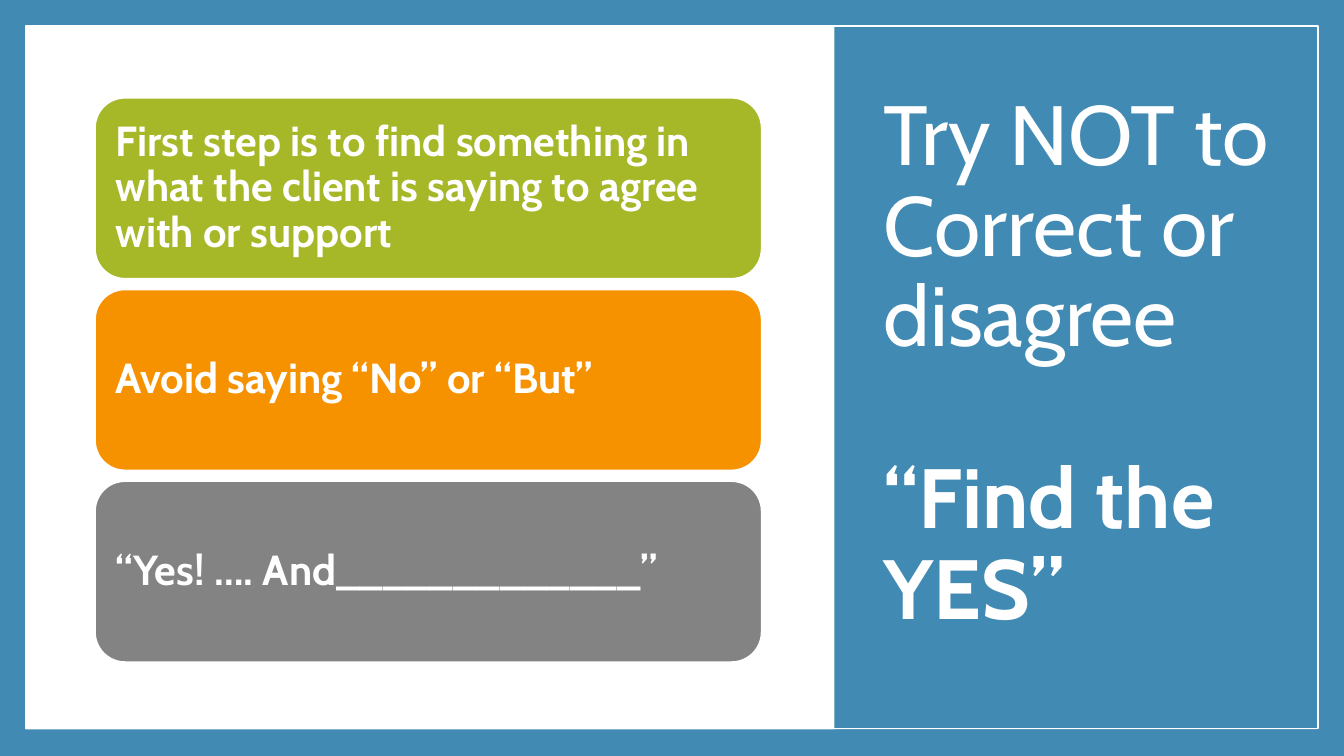
from pptx import Presentation
from pptx.dml.color import RGBColor
from pptx.enum.shapes import MSO_SHAPE
from pptx.enum.text import MSO_ANCHOR, PP_ALIGN
from pptx.util import Cm, Pt

BLUE = RGBColor(0x41, 0x8A, 0xB3)
WHITE = RGBColor(0xFF, 0xFF, 0xFF)
GREEN = RGBColor(0xA6, 0xB7, 0x27)
ORANGE = RGBColor(0xF6, 0x92, 0x00)
GRAY = RGBColor(0x83, 0x83, 0x83)

STEPS = [
    ("First step is to find something in what the client is saying to agree with or support", GREEN),
    ("Avoid saying “No” or “But”", ORANGE),
    ("“Yes! …. And_____________”", GRAY),
]
STEP_TOP, STEP_PITCH = 2.46, 4.83


class SlideBuilder:
    """Holds the text style and the current slide."""

    def __init__(self, slide, font_name="Cabin", text_color=WHITE, line_spacing=0.9):
        self.slide = slide
        self.font_name = font_name
        self.text_color = text_color
        self.line_spacing = line_spacing

    def background(self, color):
        fill = self.slide.background.fill
        fill.solid()
        fill.fore_color.rgb = color

    def panel(self, left, top, width, height, fill=None, outline=None, preset=MSO_SHAPE.RECTANGLE):
        panel = self.slide.shapes.add_shape(preset, Cm(left), Cm(top), Cm(width), Cm(height))
        panel.shadow.inherit = False
        if fill is None:
            panel.fill.background()
        else:
            panel.fill.solid()
            panel.fill.fore_color.rgb = fill
        if outline is None:
            panel.line.fill.background()
        else:
            panel.line.color.rgb = WHITE
            panel.line.width = Pt(outline)
        return panel

    def add_text(self, paragraph, text, size, bold=False):
        paragraph.alignment = PP_ALIGN.LEFT
        paragraph.line_spacing = self.line_spacing
        run = paragraph.add_run()
        run.text = text
        run.font.name = self.font_name
        run.font.size = Pt(size)
        run.font.bold = bold
        run.font.color.rgb = self.text_color

    def step(self, top, text, color):
        bar = self.panel(2.39, top, 16.81, 4.57, color, 1.5, MSO_SHAPE.ROUNDED_RECTANGLE)
        frame = bar.text_frame
        frame.word_wrap = True
        frame.vertical_anchor = MSO_ANCHOR.MIDDLE
        frame.margin_left = frame.margin_right = Cm(0.3)
        frame.margin_top = frame.margin_bottom = Cm(0.3)
        self.add_text(frame.paragraphs[0], text, 30, bold=True)

    def title(self, heading, motto):
        frame = self.slide.shapes.add_textbox(Cm(22.02), Cm(1.7), Cm(11), Cm(15)).text_frame
        frame.word_wrap = True
        frame.vertical_anchor = MSO_ANCHOR.MIDDLE
        self.add_text(frame.paragraphs[0], heading, 60)
        motto_paragraph = frame.add_paragraph()
        motto_paragraph.space_before = Pt(65)
        self.add_text(motto_paragraph, motto, 60, bold=True)


def main():
    presentation = Presentation()
    presentation.slide_width = Cm(33.87)
    presentation.slide_height = Cm(19.05)
    builder = SlideBuilder(presentation.slides.add_slide(presentation.slide_layouts[6]))

    builder.background(BLUE)
    builder.panel(0.64, 0.68, 32.56, 17.7, fill=WHITE)
    builder.panel(21.03, 0.66, 12.19, 17.73, fill=BLUE)
    builder.title("Try NOT to Correct or disagree", "“Find the YES”")
    builder.panel(0.66, 0.66, 32.56, 17.7, outline=1)
    for index, (text, color) in enumerate(STEPS):
        builder.step(STEP_TOP + index * STEP_PITCH, text, color)

    presentation.save("out.pptx")


if __name__ == "__main__":
    main()
